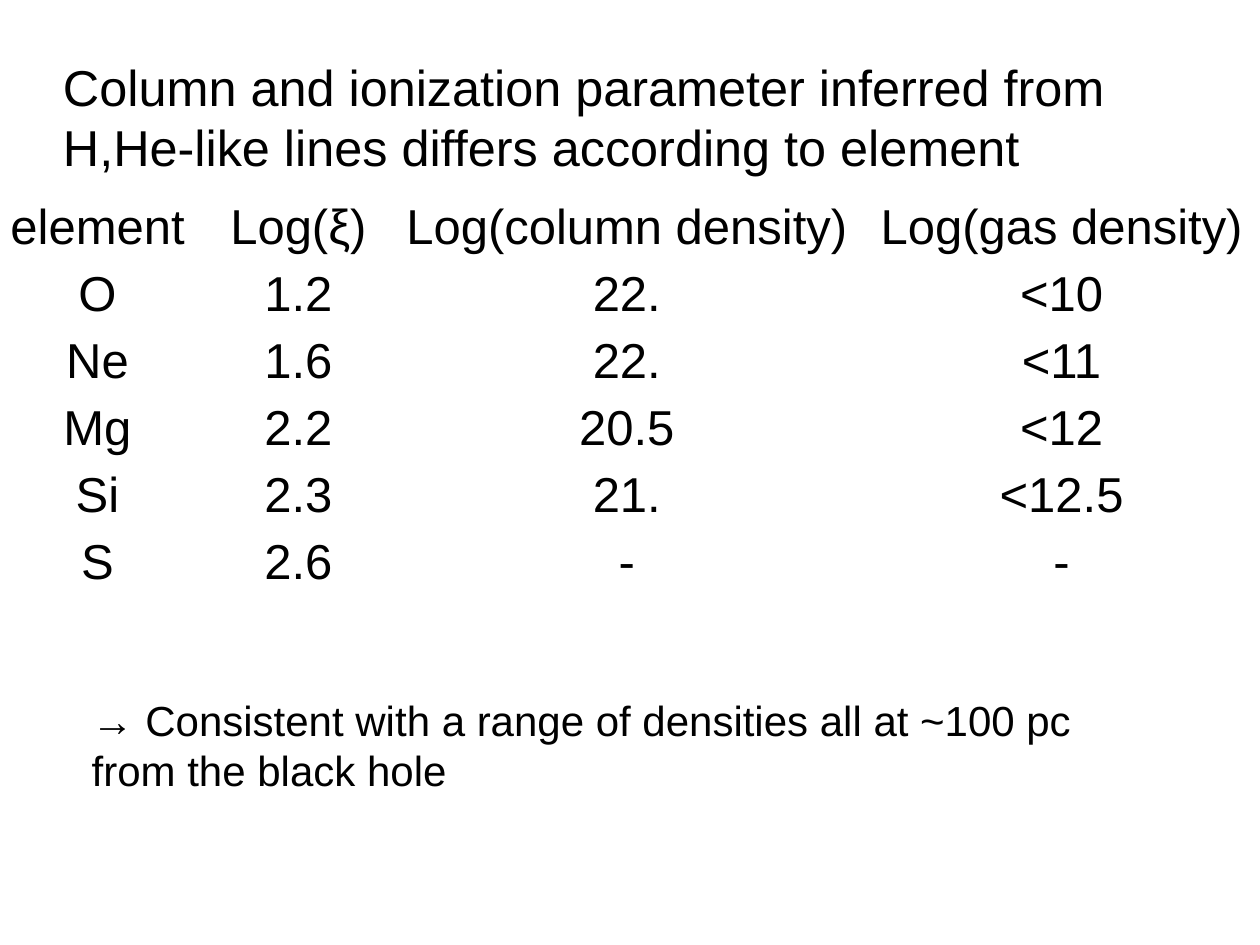
from dataclasses import dataclass

from pptx import Presentation
from pptx.dml.color import RGBColor
from pptx.enum.text import MSO_ANCHOR, MSO_AUTO_SIZE, PP_ALIGN
from pptx.util import Cm, Pt

MIDDLE, TOP = MSO_ANCHOR.MIDDLE, MSO_ANCHOR.TOP
FIXED, GROW = MSO_AUTO_SIZE.NONE, MSO_AUTO_SIZE.SHAPE_TO_FIT_TEXT
CENTER = PP_ALIGN.CENTER
FONT = "Arial"
COLORS = {"text": "000000", "back": "FFFFFF"}


@dataclass
class Label:
    text: str
    left: float
    top: float
    width: float
    height: float
    size: float
    inset: tuple[float, float]
    anchor: MSO_ANCHOR
    fit: MSO_AUTO_SIZE


LABELS = [
    Label("Column and ionization parameter inferred from "
          "H,He-like lines differs according to element",
          1.27, 0.76, 22.86, 3.18, 28.8, (0, 0), MIDDLE, FIXED),
    Label("→ Consistent with a range of densities all at ~100 pc "
          "from the black hole",
          1.6, 13.87, 21.06, 2.31, 24, (0.25, 0.13), TOP, GROW),
]

ROWS = [
    ("element", "Log(ξ)", "Log(column density)", "Log(gas density)"),
    ("O", "1.2", "22.", "<10"),
    ("Ne", "1.6", "22.", "<11"),
    ("Mg", "2.2", "20.5", "<12"),
    ("Si", "2.3", "21.", "<12.5"),
    ("S", "2.6", "-", "-"),
]
WIDTHS = (4.39, 3.71, 9.53, 8)
ROW_HIGH = 1.35


def style(para, size: float) -> None:
    for run in para.runs:
        run.font.name = FONT
        run.font.size = Pt(size)
        run.font.color.rgb = RGBColor.from_string(COLORS["text"])


def add_label(slide, label: Label) -> None:
    box = slide.shapes.add_textbox(Cm(label.left), Cm(label.top),
                                   Cm(label.width), Cm(label.height))
    frame = box.text_frame
    frame.word_wrap = True
    frame.auto_size = label.fit
    frame.vertical_anchor = label.anchor
    side, edge = label.inset
    frame.margin_left = frame.margin_right = Cm(side)
    frame.margin_top = frame.margin_bottom = Cm(edge)
    frame.text = label.text
    style(frame.paragraphs[0], label.size)


def add_grid(slide, left: float, top: float) -> None:
    table = slide.shapes.add_table(
        len(ROWS), len(WIDTHS), Cm(left), Cm(top),
        Cm(sum(WIDTHS)), Cm(ROW_HIGH * len(ROWS))).table
    table.first_row = table.horz_banding = False
    for col, width in zip(table.columns, WIDTHS):
        col.width = Cm(width)
    for row, texts in zip(table.rows, ROWS):
        row.height = Cm(ROW_HIGH)
        for cell, text in zip(row.cells, texts):
            cell.fill.solid()
            cell.fill.fore_color.rgb = RGBColor.from_string(COLORS["back"])
            cell.margin_top = cell.margin_bottom = Cm(0.1)
            para = cell.text_frame.paragraphs[0]
            para.text = text
            para.alignment = CENTER
            style(para, 28)


def main() -> None:
    deck = Presentation()
    deck.slide_width, deck.slide_height = Cm(25.4), Cm(19.05)
    slide = deck.slides.add_slide(deck.slide_layouts[6])
    title, note = LABELS

    # Title
    add_label(slide, title)
    # Results by element
    add_grid(slide, -0.23, 3.94)
    # Conclusion
    add_label(slide, note)

    deck.save("out.pptx")


if __name__ == "__main__":
    main()
